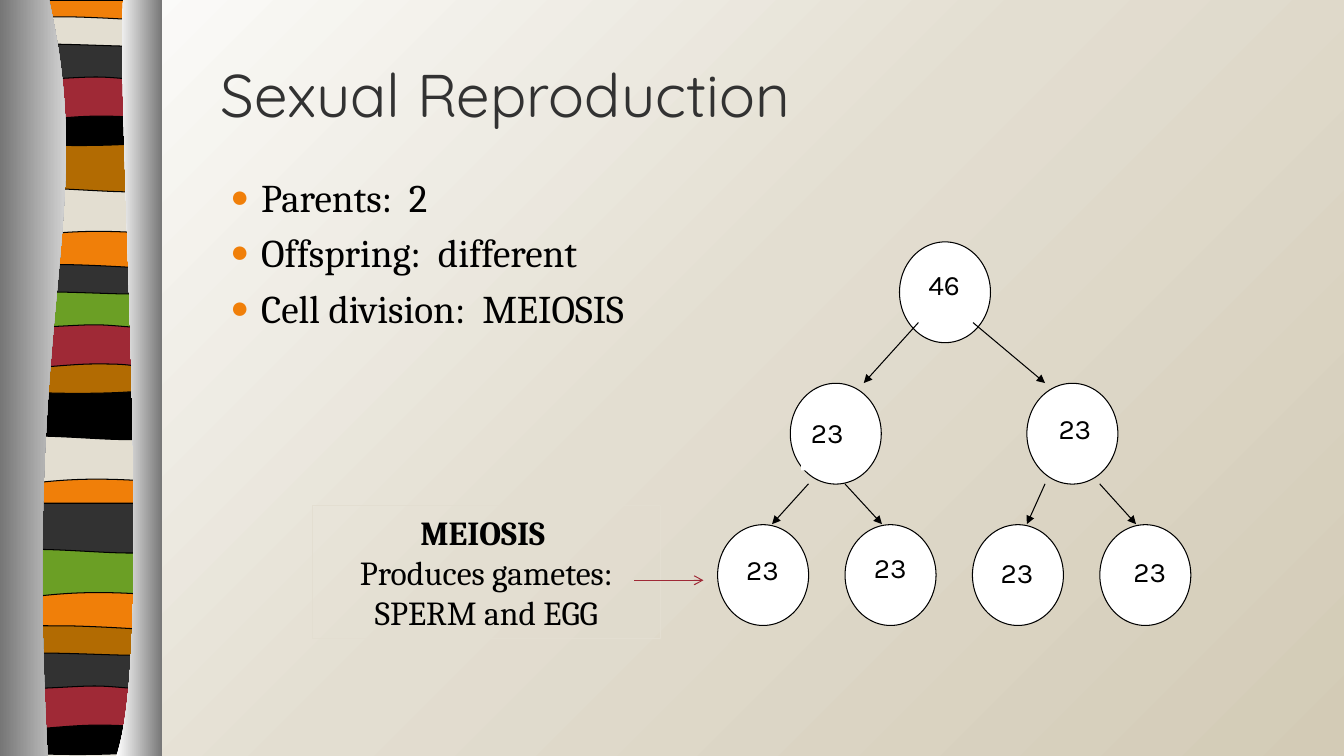
from copy import deepcopy
from lxml import etree
from pptx import Presentation
from pptx.dml.color import RGBColor
from pptx.enum import shapes as kinds, text
from pptx.oxml.ns import qn
from pptx.util import Pt


def color(value):
    return RGBColor.from_string(value)


def add_outline(start, segments, left=0, top=0):
    """Segments are (x, y) for a line or six numbers for a Bezier curve."""
    points = [start]
    for segment in segments:
        points += zip(segment[::2], segment[1::2])
    corners = [(Pt(left + x), Pt(top + y)) for x, y in points]
    builder = ribbon.shapes.build_freeform(*corners[0])
    builder.add_line_segments(corners[1:], close=True)
    outline = builder.convert_to_shape()
    outline.shadow.inherit = False
    # Join each three points of a curve into one Bezier segment
    steps = iter(outline._element.findall(".//" + qn("a:lnTo")))
    for segment in segments:
        first = next(steps)
        if len(segment) == 6:
            curve = etree.Element(qn("a:cubicBezTo"))
            first.addprevious(curve)
            for step in (first, next(steps), next(steps)):
                curve.append(step[0])
                step.getparent().remove(step)
    return outline


presentation = Presentation()
presentation.slide_width, presentation.slide_height = Pt(960), Pt(540)
slide = presentation.slides.add_slide(presentation.slide_layouts[5])

# Background gradient
backdrop = slide.shapes.add_shape(kinds.MSO_SHAPE.RECTANGLE, 0, 0, Pt(960), Pt(540))
backdrop.shadow.inherit = False
backdrop.line.fill.background()
backdrop.fill.gradient()
backdrop.fill.gradient_angle = 315
stop_list = backdrop._element.find(".//" + qn("a:gsLst"))
stop_list.insert(1, deepcopy(stop_list[0]))
for stop, position, value in zip(backdrop.fill.gradient_stops, (0, 0.5, 1),
                                 ("FFFFFF", "E3DED1", "D3CBB6")):
    stop.position, stop.color.rgb = position, color(value)

# Striped ribbon: offset in tier, height, bottom edge, top edge
ribbon = slide.shapes.add_group_shape()
STRIPE_WIDTH = 108
profiles = {
    "wave": (118, 34, [(33, -6, 17, 6, 0, 0)], []),
    "slope": (86.5, 34, [(90, 5, 33, -4, 0, 0)], []),
    "thin": (0, 17, [(90, 3, 18, 3, 0, 0)],
             [(7, -3.5, 24, -3, 42, -3), (60, -3, 94, -1, 108, 0)]),
    "bowl": (62, 24, [(90, 4, 18, 4, 0, 0)], [(66, 4, 85, 0, 108, 0)]),
    "arch": (38, 34, [(91, -4, 84, -4, 66, -4), (48, -4, 17, 0, 0, 0)], []),
    "ripple": (18, 22, [(101, 4, 84, 0, 66, 0), (48, 0, 11, 4, 0, 0)],
               [(15, -3.5, 73, 0, 91, 0)]),
}
tiers = [
    (2.5, 15, {"wave": "E3DED1", "slope": "B26B02", "thin": "E3DED1",
               "bowl": "000000", "arch": "9F2936", "ripple": "323232"}),
    (1.5, 192, {"wave": "E3DED1", "slope": "000000", "thin": "323232",
                "bowl": "B26B02", "arch": "9F2936", "ripple": "6B9F25"}),
    (2.5, 273, {"wave": "6B9F25", "slope": "323232"}),
    (1.5, 450, {"thin": "B26B02", "bowl": "000000", "arch": "9F2936",
                "ripple": "323232"}),
]
base = add_outline((110.5, 0), [(110.5, 538), (2.5, 538), (2.5, 0)])
stripes = [(base, "F07F09")]
for left, tier_top, fills in tiers:
    for name, value in fills.items():
        offset, height, bottom_edge, top_edge = profiles[name]
        lowered = [tuple(n + height * (i % 2) for i, n in enumerate(curve))
                   for curve in bottom_edge]
        segments = [(STRIPE_WIDTH, height), *lowered, (0, 0), *top_edge]
        stripe = add_outline((STRIPE_WIDTH, 0), segments, left, tier_top + offset)
        stripes.append((stripe, value))
for stripe, value in stripes:
    stripe.fill.solid()
    stripe.fill.fore_color.rgb = color(value)
    stripe.line.color.rgb = color("000000")
    stripe.line.width = Pt(0.75)

# Curved metal panels on both sides of the ribbon
for start, segments, values in [
    ((35, 0), [(70, 156, 16, 213, 34, 540), (0, 540), (0, 0)], ("767676", "FFFFFF")),
    ((88, 0), [(83, 90, 111, 466, 83, 540), (116, 540), (116, 0)], ("FFFFFF", "767676")),
]:
    panel = add_outline(start, segments)
    panel.line.fill.background()
    panel.fill.gradient()
    panel.fill.gradient_angle = 0
    for stop, value in zip(panel.fill.gradient_stops, values):
        stop.color.rgb = color(value)

# Title
title = slide.shapes.title
slide.shapes._spTree.append(title._element)
title.left, title.top, title.width, title.height = Pt(150.5), Pt(21.6), Pt(787), Pt(90)
title.text_frame.text = "Sexual Reproduction"
title.text_frame.vertical_anchor = text.MSO_ANCHOR.MIDDLE
title.text_frame.paragraphs[0].alignment = text.PP_ALIGN.LEFT
title_font = title.text_frame.paragraphs[0].runs[0].font
for key, value in {"name": "Quicksand", "size": Pt(43)}.items():
    setattr(title_font, key, value)
title_font.color.rgb = color("323232")

# Cells, one row per generation
CELL_WIDTH, CELL_HEIGHT, ROW_STEP = 65, 72, 101
rows = [[642.5], [564.5, 733.5], [512.6 + 91 * i for i in range(4)]]
for row, lefts in enumerate(rows):
    for left in lefts:
        cell = slide.shapes.add_shape(kinds.MSO_SHAPE.OVAL, Pt(left),
                                      Pt(172.8 + ROW_STEP * row),
                                      Pt(CELL_WIDTH), Pt(CELL_HEIGHT))
        cell.shadow.inherit = False
        cell.fill.solid()
        cell.fill.fore_color.rgb = color("FFFFFF")
        cell.line.color.rgb = color("000000")
        cell.line.width = Pt(0.75)

# Chromosome counts, bullet list and note
count_format = {"name": "Karla", "size": Pt(20)}
list_format = {"name": "Cambria", "size": Pt(28)}
note_format = {"name": "Cambria", "size": Pt(24)}
counts = [(656, 187.5, "46"), (572.2, 293.5, "23"), (749, 290.5, "23"),
          (525.8, 391.4, "23"), (617.2, 390, "23"), (707.6, 393.2, "23"),
          (802.5, 392.7, "23")]
blocks = [(x, y, 38.8, 42.5, [count], count_format) for x, y, count in counts]
blocks += [
    (150.5, 120, 384, 367,
     ["Parents:  2", "Offspring:  different", "Cell division:  MEIOSIS"], list_format),
    (223.2, 361.4, 248.4, 94.4,
     ["MEIOSIS ", "Produces gametes:", "SPERM and EGG"], note_format),
]
for left, top, width, height, lines, font_format in blocks:
    box = slide.shapes.add_textbox(Pt(left), Pt(top), Pt(width), Pt(height))
    frame = box.text_frame
    frame.word_wrap = font_format is not count_format
    frame.text = "\n".join(lines)
    for paragraph in frame.paragraphs:
        font = paragraph.runs[0].font
        for key, value in font_format.items():
            setattr(font, key, value)
        font.color.rgb = color("000000")
        if font_format is note_format:
            paragraph.alignment = text.PP_ALIGN.CENTER
        if font_format is list_format:
            paragraph.space_before = Pt(6)
            properties = paragraph._p.get_or_add_pPr()
            properties.set("marL", str(Pt(29)))
            properties.set("indent", str(-Pt(22)))
            bullet_color = etree.SubElement(properties, qn("a:buClr"))
            etree.SubElement(bullet_color, qn("a:srgbClr"), val="F07F09")
            etree.SubElement(properties, qn("a:buSzPct"), val="80000")
            etree.SubElement(properties, qn("a:buFont"), typeface="Arial")
            etree.SubElement(properties, qn("a:buChar"), char="●")
    if font_format is count_format:
        box.fill.solid()
        box.fill.fore_color.rgb = color("FFFFFF")
    if font_format is note_format:
        frame.vertical_anchor = text.MSO_ANCHOR.MIDDLE
        frame.paragraphs[0].runs[0].font.bold = True
        box.line.color.rgb = color("E3DED1")
        box.line.width = Pt(0.75)

# Division arrows and the arrow from the note
arrows = [(656, 230.4, 617, 273.6), (695, 230.4, 746.5, 273.6),
          (577.5, 345.6, 551.5, 374.4), (603.5, 345.6, 630, 374.4),
          (746.5, 345.6, 733.5, 374.4), (785.5, 345.6, 811.5, 374.4),
          (453, 414.5, 502.5, 414.5)]
for arrow in arrows:
    from_note = arrow is arrows[-1]
    connector = slide.shapes.add_connector(kinds.MSO_CONNECTOR.STRAIGHT, *map(Pt, arrow))
    connector.line.color.rgb = color("9F2936" if from_note else "000000")
    connector.line.width = Pt(0.75)
    etree.SubElement(connector.line._get_or_add_ln(), qn("a:tailEnd"),
                     type="arrow" if from_note else "triangle")
    etree.SubElement(connector._element.spPr, qn("a:effectLst"))

presentation.save("out.pptx")
